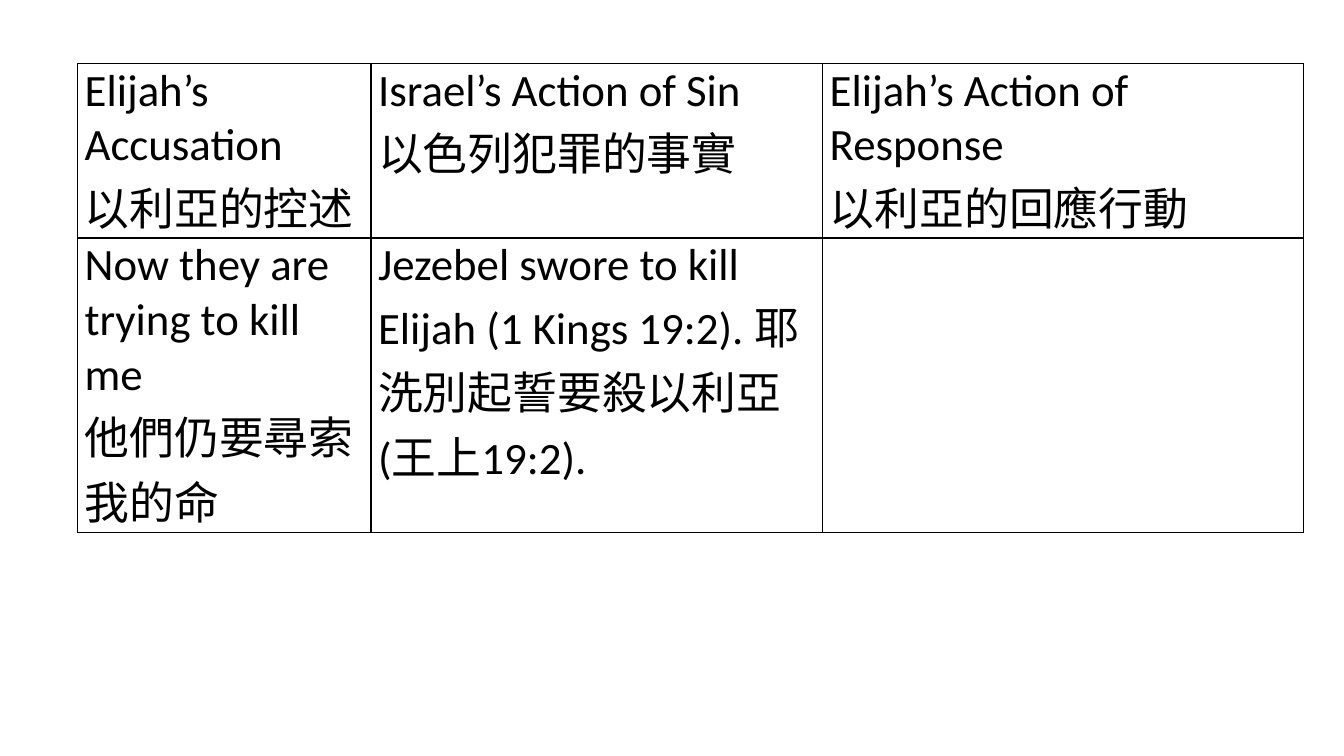
from lxml.etree import SubElement
from pptx import Presentation
from pptx.dml.color import RGBColor
from pptx.oxml.ns import qn
from pptx.util import Inches, Pt

BLACK = RGBColor(0x00, 0x00, 0x00)
FONT_NAME = "Calibri"
FONT_SIZE = Pt(32)
BORDER_WIDTH = Pt(1)
SIDE_MARGIN = Inches(0.07)

# Each cell is a list of paragraphs.
ROWS = [
    [
        ["Elijah’s Accusation", "以利亞的控述"],
        ["Israel’s Action of Sin", "以色列犯罪的事實"],
        ["Elijah’s Action of Response", "以利亞的回應行動"],
    ],
    [
        ["Now they are trying to kill me", "他們仍要尋索我的命"],
        ["Jezebel swore to kill Elijah (1 Kings 19:2). 耶洗別起誓要殺以利亞 (王上19:2)."],
        [],
    ],
]
TABLE_LEFT, TABLE_TOP = 0.77, 0.63
COLUMN_WIDTHS = [2.91, 4.48, 4.77]
ROW_HEIGHTS = [1.73, 2.92]


def add_borders(cell):
    properties = cell._tc.get_or_add_tcPr()
    for position, side in enumerate(("lnL", "lnR", "lnT", "lnB")):
        line = SubElement(properties, qn(f"a:{side}"), w=str(BORDER_WIDTH))
        fill = SubElement(line, qn("a:solidFill"))
        SubElement(fill, qn("a:srgbClr"), val=str(BLACK))
        properties.insert(position, line)  # borders must precede the cell fill


def fill_cell(cell, lines):
    cell.fill.background()
    cell.margin_left = cell.margin_right = SIDE_MARGIN
    cell.margin_top = cell.margin_bottom = 0
    add_borders(cell)
    cell.text = "\n".join(lines)
    for paragraph in cell.text_frame.paragraphs:
        paragraph.font.name = FONT_NAME
        paragraph.font.size = FONT_SIZE
        paragraph.font.color.rgb = BLACK


def main():
    presentation = Presentation()
    presentation.slide_width = Inches(13.33)
    presentation.slide_height = Inches(7.5)
    slide = presentation.slides.add_slide(presentation.slide_layouts[6])

    table = slide.shapes.add_table(
        len(ROW_HEIGHTS), len(COLUMN_WIDTHS),
        Inches(TABLE_LEFT), Inches(TABLE_TOP),
        Inches(sum(COLUMN_WIDTHS)), Inches(sum(ROW_HEIGHTS)),
    ).table
    table.first_row = table.horz_banding = False
    for column, width in zip(table.columns, COLUMN_WIDTHS):
        column.width = Inches(width)
    for row, height, contents in zip(table.rows, ROW_HEIGHTS, ROWS):
        row.height = Inches(height)
        for cell, lines in zip(row.cells, contents):
            fill_cell(cell, lines)

    presentation.save("out.pptx")


if __name__ == "__main__":
    main()
